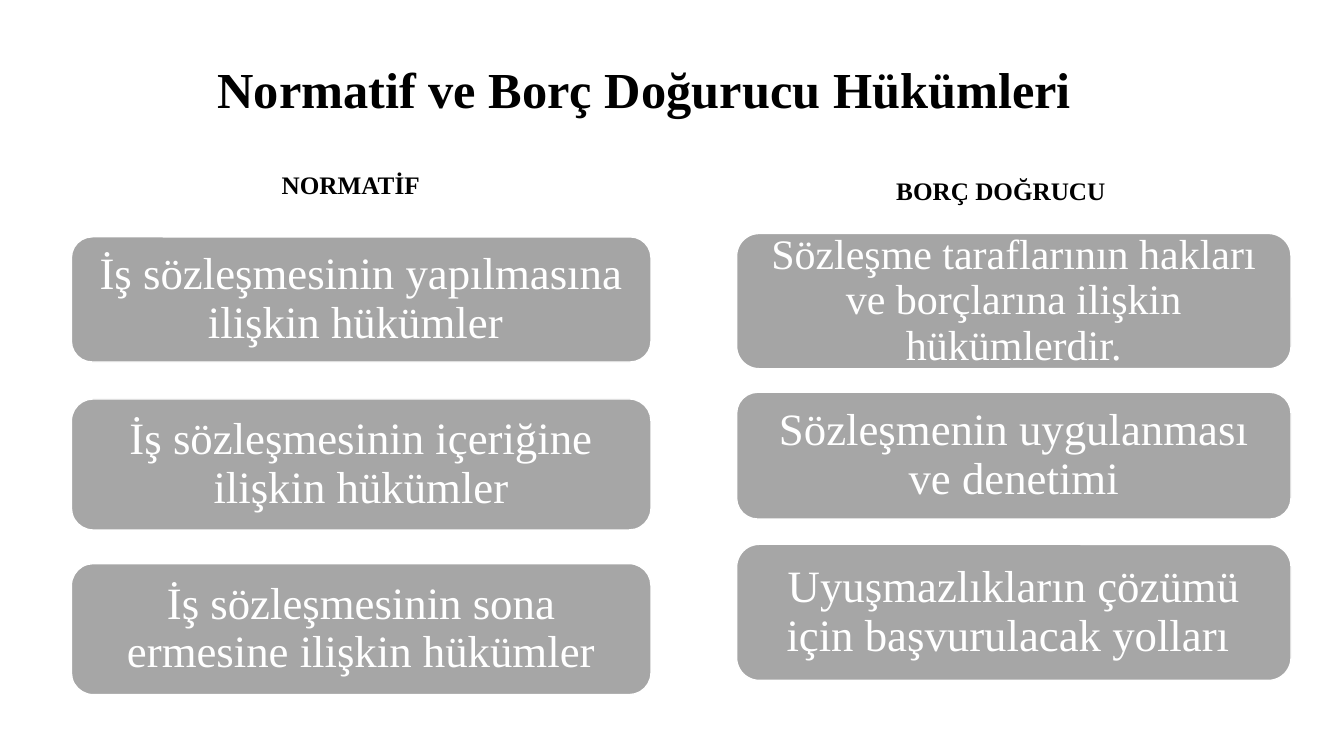
from dataclasses import dataclass

from pptx import Presentation
from pptx.dml.color import RGBColor
from pptx.enum.shapes import MSO_SHAPE as Shape
from pptx.enum.text import MSO_ANCHOR as Anchor, PP_ALIGN as Align
from pptx.util import Inches, Pt


@dataclass(frozen=True)
class Theme:
    font: str = "Times New Roman"
    ink: str = "000000"
    card_text: str = "FFFFFF"
    card_line: str = "FFFFFF"
    lead_card: str = "A5A5A5"
    card: str = "A6A6A6"
    title_size: int = 36
    heading_size: int = 18
    card_size: int = 32
    dense_size: int = 30
    spacing: float = 0.9


class SlideBuilder:
    """Places themed elements on a slide grid of 160 columns and 90 rows."""

    def __init__(self, presentation, theme):
        self.theme = theme
        self.column = presentation.slide_width / 160
        self.row = presentation.slide_height / 90
        self.slide = presentation.slides.add_slide(presentation.slide_layouts[5])

    def box(self, left, top, width, height):
        return (int(left * self.column), int(top * self.row),
                int(width * self.column), int(height * self.row))

    def add_text(self, shape, text, size, color, align, bold=False, spacing=None):
        frame = shape.text_frame
        frame.word_wrap = True
        paragraph = frame.paragraphs[0]
        paragraph.alignment = align
        paragraph.line_spacing = spacing
        run = paragraph.add_run()
        run.text = text
        run.font.name = self.theme.font
        run.font.size = Pt(size)
        run.font.bold = bold
        run.font.color.rgb = RGBColor.from_string(color)

    def title(self, text, *place):
        shape = self.slide.shapes.title
        shape.left, shape.top, shape.width, shape.height = self.box(*place)
        shape.text_frame.vertical_anchor = Anchor.MIDDLE
        self.add_text(shape, text, self.theme.title_size, self.theme.ink,
                      Align.LEFT, bold=True, spacing=self.theme.spacing)

    def heading(self, text, *place):
        shape = self.slide.shapes.add_textbox(*self.box(*place))
        self.add_text(shape, text, self.theme.heading_size, self.theme.ink,
                      Align.CENTER, bold=True)

    def card(self, text, size, fill, *place):
        shape = self.slide.shapes.add_shape(Shape.ROUNDED_RECTANGLE, *self.box(*place))
        shape.shadow.inherit = False
        shape.fill.solid()
        shape.fill.fore_color.rgb = RGBColor.from_string(fill)
        shape.line.color.rgb = RGBColor.from_string(self.theme.card_line)
        shape.line.width = Pt(1)
        frame = shape.text_frame
        frame.vertical_anchor = Anchor.MIDDLE
        inset = int(1.5 * self.column)
        frame.margin_left = frame.margin_right = inset
        frame.margin_top = frame.margin_bottom = inset
        self.add_text(shape, text, size, self.theme.card_text, Align.CENTER,
                      spacing=self.theme.spacing)

    def card_column(self, left, width, cards):
        for index, (text, size, top, height) in enumerate(cards):
            fill = self.theme.card if index else self.theme.lead_card
            self.card(text, size, fill, left, top, width, height)


def main():
    presentation = Presentation()
    presentation.slide_width = Inches(40 / 3)
    presentation.slide_height = Inches(7.5)
    theme = Theme()
    builder = SlideBuilder(presentation, theme)

    builder.title("Normatif ve Borç Doğurucu Hükümleri", 24.7, 2.9, 126.7, 16.2)
    builder.card_column(8.5, 69, [
        ("İş sözleşmesinin yapılmasına ilişkin hükümler ", theme.card_size, 28.2, 14.9),
        ("İş sözleşmesinin içeriğine ilişkin hükümler", theme.card_size, 47.5, 15.6),
        ("İş sözleşmesinin sona ermesine ilişkin hükümler", theme.card_size, 67.1, 15.6),
    ])
    builder.card_column(87.7, 66, [
        ("Sözleşme taraflarının hakları ve borçlarına ilişkin hükümlerdir.",
         theme.dense_size, 27.8, 16.1),
        ("Sözleşmenin uygulanması ve denetimi", theme.card_size, 46.7, 15.1),
        ("Uyuşmazlıkların çözümü için başvurulacak yolları ", theme.card_size, 64.8, 16.2),
    ])
    builder.heading("NORMATİF", 15.4, 19.6, 52.7, 4.8)
    builder.heading("BORÇ DOĞRUCU", 92.8, 20.3, 52.7, 4.8)
    presentation.save("out.pptx")


if __name__ == "__main__":
    main()
